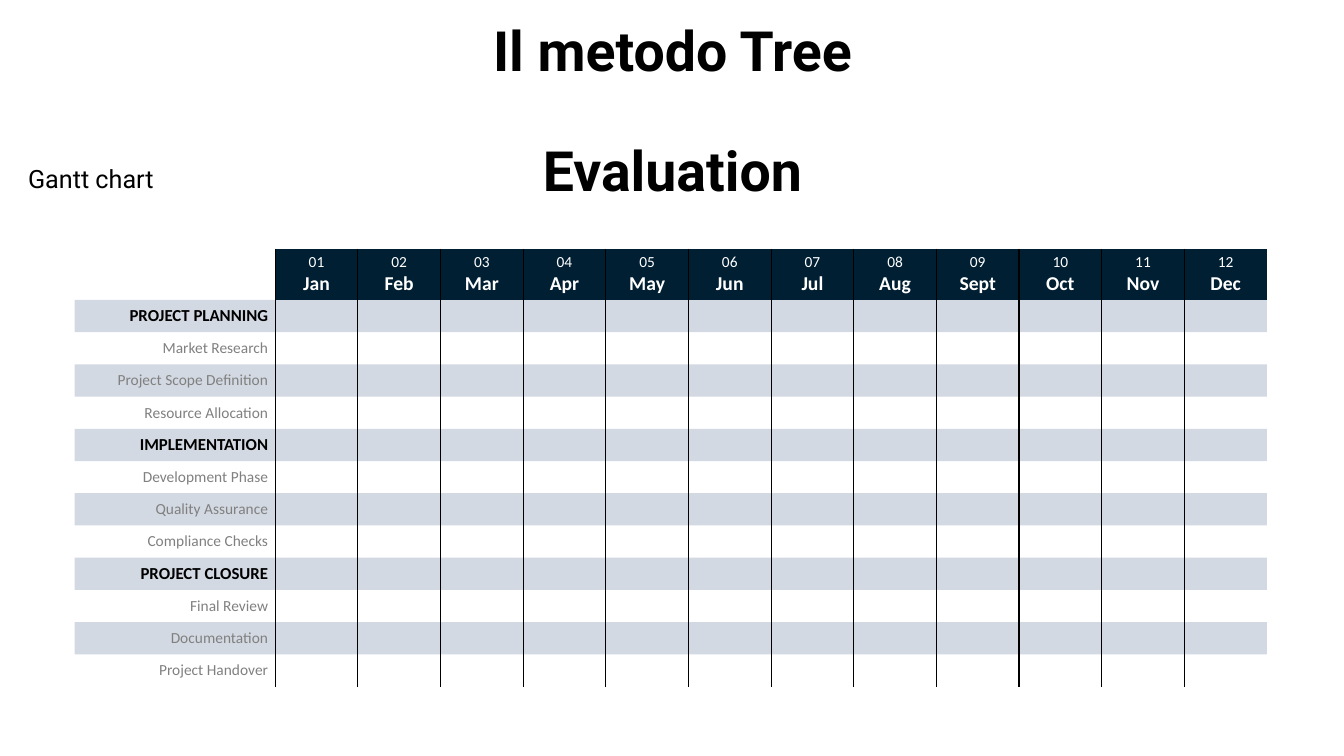
from lxml import etree
from pptx import Presentation
from pptx import util as u
from pptx.dml.color import RGBColor
from pptx.enum import text
from pptx.oxml import ns

BLACK = RGBColor(0x00, 0x00, 0x00)
WHITE = RGBColor(0xFF, 0xFF, 0xFF)
GREY = RGBColor(0x80, 0x80, 0x80)
NAVY = RGBColor(0x00, 0x1F, 0x33)
BAND = RGBColor(0x24, 0x44, 0x70)
NO_STYLE = "{2D5ABB26-0587-4C30-8999-92F81FD0307C}"

MONTHS = ["Jan", "Feb", "Mar", "Apr", "May", "Jun",
          "Jul", "Aug", "Sept", "Oct", "Nov", "Dec"]
PHASES = {
    "PROJECT PLANNING": ["Market Research", "Project Scope Definition", "Resource Allocation"],
    "IMPLEMENTATION": ["Development Phase", "Quality Assurance", "Compliance Checks"],
    "PROJECT CLOSURE": ["Final Review", "Documentation", "Project Handover"],
}


def sub(parent, tag, **attrs):
    return etree.SubElement(parent, ns.qn(tag), **attrs)


class GanttSlide:
    heading_font = "Roboto"
    table_font = "Calibri"

    def __init__(self, prs):
        self.s = prs.slides.add_slide(prs.slide_layouts[5])

    def run(self, p, words, font, size, color, bold=False):
        r = p.add_run()
        r.text = words
        r.font.name = font
        r.font.size = u.Pt(size)
        r.font.bold = bold
        r.font.color.rgb = color

    def title(self, lines, x, y, w, h):
        sp = self.s.shapes.title
        sp.left, sp.top, sp.width, sp.height = map(u.Inches, (x, y, w, h))
        tf = sp.text_frame
        tf.word_wrap = True
        tf.auto_size = text.MSO_AUTO_SIZE.NONE
        tf.vertical_anchor = text.MSO_ANCHOR.MIDDLE
        for i, line in enumerate(lines):
            p = tf.add_paragraph() if i else tf.paragraphs[0]
            p.alignment = text.PP_ALIGN.CENTER
            p.line_spacing = 0.9
            p.space_before = u.Pt(42.5 if i else 0)
            self.run(p, line, self.heading_font, 39.6, BLACK, True)

    def label(self, words, x, y, w, h):
        sp = self.s.shapes.add_textbox(*map(u.Inches, (x, y, w, h)))
        tf = sp.text_frame
        tf.word_wrap = True
        self.run(tf.paragraphs[0], words, self.heading_font, 18, BLACK)

    def table(self, rows, cols, x, y, widths, heights):
        frame = self.s.shapes.add_table(rows, cols, u.Inches(x), u.Inches(y),
                                        u.Inches(sum(widths)), u.Inches(sum(heights)))
        tbl = frame.table
        tbl.first_row = tbl.horz_banding = False
        frame.element.find(".//" + ns.qn("a:tableStyleId")).text = NO_STYLE
        for col, width in zip(tbl.columns, widths):
            col.width = u.Inches(width)
        for row, height in zip(tbl.rows, heights):
            row.height = u.Inches(height)
        return tbl

    def cell(self, cell, lines, align, anchor, fill=None, alpha=None, sides=()):
        """Fill a cell; lines holds (words, size, color, bold) tuples."""
        cell.margin_left = cell.margin_right = u.Inches(0.07)
        cell.margin_top = cell.margin_bottom = u.Inches(0.04)
        cell.vertical_anchor = anchor
        tf = cell.text_frame
        for i, (words, size, color, bold) in enumerate(lines):
            p = tf.add_paragraph() if i else tf.paragraphs[0]
            p.alignment = align
            self.run(p, words, self.table_font, size, color, bold)
        if not lines:
            # keeps an empty row from growing
            sub(tf.paragraphs[0]._p, "a:endParaRPr", sz="1100")
        if fill is None:
            cell.fill.background()
        else:
            cell.fill.solid()
            cell.fill.fore_color.rgb = fill
        tc_pr = cell._tc.get_or_add_tcPr()
        if alpha:
            sub(tc_pr.find(".//" + ns.qn("a:srgbClr")), "a:alpha", val=str(alpha * 1000))
        # Borders come before the fill
        for i, side in enumerate(sides):
            ln = sub(tc_pr, "a:ln" + side, w=str(u.Pt(1)))
            clr = sub(sub(ln, "a:solidFill"), "a:srgbClr", val=str(BLACK))
            sub(clr, "a:alpha", val="30000")
            tc_pr.insert(i, ln)


def main():
    prs = Presentation()
    prs.slide_width, prs.slide_height = u.Inches(13.33), u.Inches(7.5)
    slide = GanttSlide(prs)

    # Title
    slide.title(["Il metodo Tree", "Evaluation"], 0.92, 0.4, 11.5, 1.45)

    # Row labels: each phase followed by its tasks
    labels = []
    for phase, tasks in PHASES.items():
        labels.append((phase, 12, BLACK, True))
        labels += [(task, 11, GREY, False) for task in tasks]

    # Gantt grid
    last = len(MONTHS)
    tbl = slide.table(len(labels) + 1, last + 1, 0.74, 2.47,
                      [1.99] + [0.82] * last, [0.47] + [0.32] * len(labels))
    align, anchor = text.PP_ALIGN, text.MSO_ANCHOR
    for c in range(last + 1):
        sides = [side for side, shown in (("L", c > 0), ("R", c < last)) if shown]
        # Month header
        month = [(f"{c:02}", 11, WHITE, False), (MONTHS[c - 1], 14, WHITE, True)] if c else []
        slide.cell(tbl.cell(0, c), month, align.CENTER, anchor.BOTTOM,
                   NAVY if c else None, sides=sides)
        # Banded task rows
        for r, label in enumerate(labels, 1):
            band = (BAND, 20) if r % 2 else (None, None)
            slide.cell(tbl.cell(r, c), [] if c else [label], align.RIGHT, anchor.MIDDLE,
                       *band, sides=sides)

    # Chart label
    slide.label("Gantt chart", 0.18, 1.57, 6.67, 0.4)

    prs.save("out.pptx")


if __name__ == "__main__":
    main()
